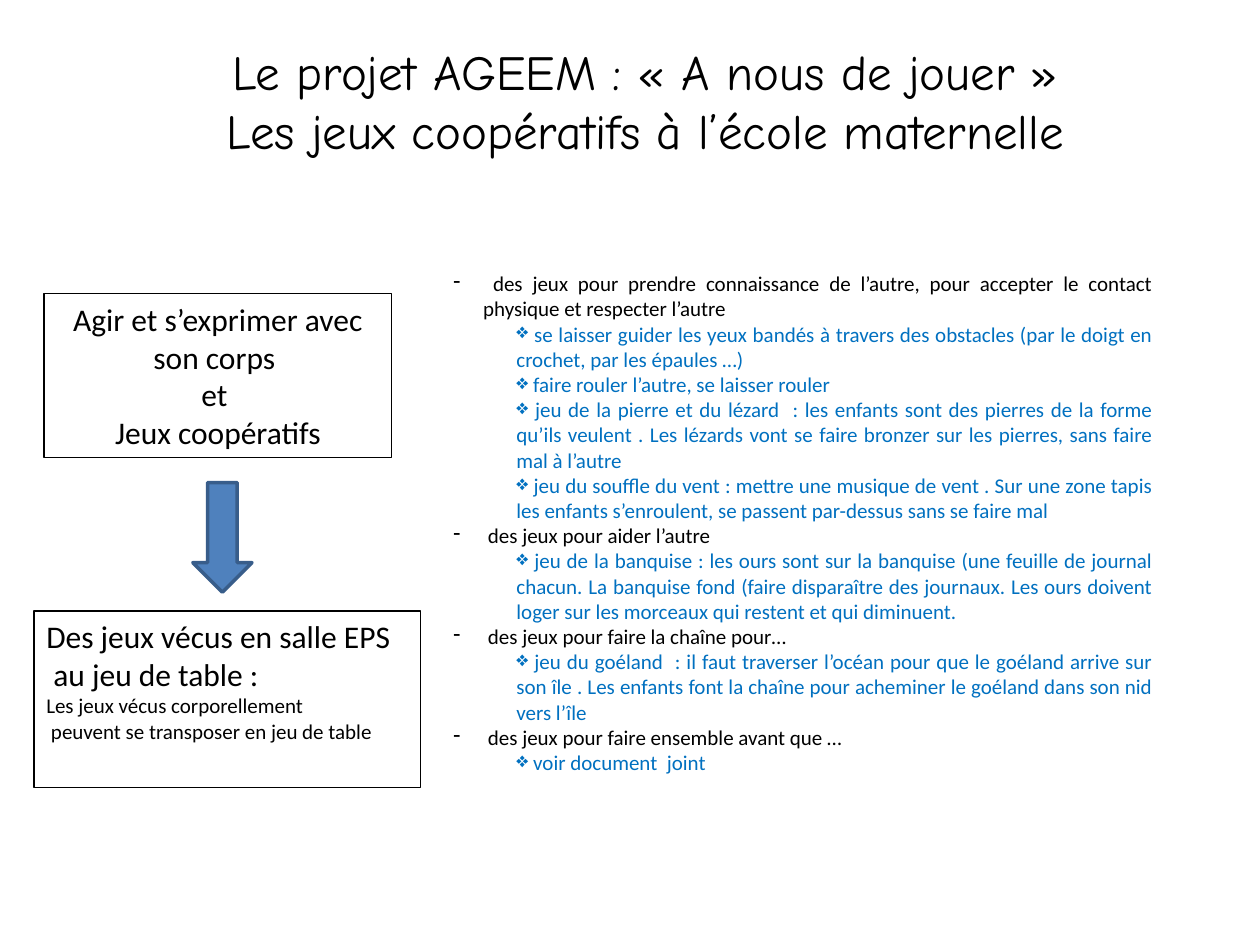
from lxml.etree import SubElement
from pptx import Presentation
from pptx.dml.color import RGBColor
from pptx.enum.shapes import MSO_SHAPE as Shape
from pptx.enum.text import MSO_ANCHOR as Anchor, PP_ALIGN as Align
from pptx.oxml.ns import qn
from pptx.util import Pt

COLORS = {"text": "000000", "activity": "0070C0", "arrow": "4F81BD", "arrow_line": "385D8A"}
TITLE_FONT, BODY_FONT = "Comic Neue", "Calibri"

TITLE = ["Le projet AGEEM : «\u00a0A nous de jouer\u00a0»", "Les jeux coopératifs à l’école maternelle"]
DOMAIN = ["Agir et s’exprimer avec son corps ", "et ", "Jeux coopératifs"]
TRANSFER = [
    ("Des jeux vécus en salle EPS", 18),
    (" au jeu de table :", 18),
    ("Les jeux vécus corporellement", 12),
    (" peuvent se transposer en jeu de table", 12),
]
GAMES = [
    (" des jeux pour prendre connaissance de l’autre, pour accepter le contact physique et respecter l’autre ", [
        " se laisser guider les yeux bandés à travers des obstacles (par le doigt en crochet, par les épaules …)",
        " faire rouler l’autre, se laisser rouler",
        " jeu de la pierre et du lézard  : les enfants sont des pierres de la forme qu’ils veulent . "
        "Les lézards vont se faire bronzer sur les pierres, sans faire mal à l’autre",
        " jeu du souffle du vent : mettre une musique de vent . Sur une zone tapis les enfants "
        "s’enroulent, se passent par-dessus sans se faire mal",
    ]),
    (" des jeux pour aider l’autre", [
        " jeu de la banquise : les ours sont sur la banquise (une feuille de journal chacun. "
        "La banquise fond (faire disparaître des journaux. Les ours doivent loger sur les morceaux "
        "qui restent et qui diminuent.",
    ]),
    (" des jeux pour faire la chaîne pour…", [
        " jeu du goéland  : il faut traverser l’océan pour que le goéland arrive sur son île . "
        "Les enfants font la chaîne pour acheminer le goéland dans son nid vers l’île",
    ]),
    (" des jeux pour faire ensemble avant que …", [" voir document  joint"]),
]
BULLETS = [("-", 17, -17, "text"), ("❖", 36, 0, "activity")]


def rgb(name):
    return RGBColor.from_string(COLORS[name])


def add_box(slide, area, kind=None):
    lengths = [Pt(value) for value in area]
    if kind is None:
        shape = slide.shapes.add_textbox(*lengths)
    else:
        shape = slide.shapes.add_shape(kind, *lengths)
        shape.shadow.inherit = False
    shape.text_frame.word_wrap = True
    shape.text_frame.vertical_anchor = Anchor.TOP
    return shape


def add_frame(slide, area):
    shape = add_box(slide, area, Shape.RECTANGLE)
    shape.fill.background()
    shape.line.color.rgb = rgb("text")
    shape.line.width = Pt(0.75)
    return shape


def write(shape, lines, font, align, color="text"):
    frame = shape.text_frame
    paragraphs = []
    for index, (text, size) in enumerate(lines):
        paragraph = frame.add_paragraph() if index else frame.paragraphs[0]
        paragraph.text = text
        paragraph.alignment = align
        paragraph.font.name = font
        paragraph.font.size = Pt(size)
        paragraph.font.color.rgb = rgb(color)
        paragraphs.append(paragraph)
    return paragraphs


def add_bullet(paragraph, level):
    character, margin, indent, color = BULLETS[level]
    paragraph.level = level
    paragraph.font.color.rgb = rgb(color)
    properties = paragraph._p.get_or_add_pPr()
    properties.set("marL", str(Pt(margin)))
    properties.set("indent", str(Pt(indent)))
    bullet = SubElement(properties, qn("a:buChar"), char=character)
    properties.find(qn("a:defRPr")).addprevious(bullet)
    bullet_color = SubElement(properties, qn("a:buClr"))
    SubElement(bullet_color, qn("a:srgbClr"), val=COLORS[color])
    bullet.addprevious(bullet_color)


def main():
    presentation = Presentation()
    presentation.slide_width, presentation.slide_height = Pt(720), Pt(540)
    slide = presentation.slides.add_slide(presentation.slide_layouts[6])

    title = add_box(slide, (54, 20.2, 629.3, 75))
    write(title, [(text, 28) for text in TITLE], TITLE_FONT, Align.CENTER)

    domain = add_frame(slide, (25.2, 167.8, 198.7, 93.6))
    write(domain, [(text, 18) for text in DOMAIN], BODY_FONT, Align.CENTER)

    transfer = add_frame(slide, (19.4, 349.2, 221, 100.8))
    write(transfer, TRANSFER, BODY_FONT, Align.LEFT)

    items = [item for aim, activities in GAMES
             for item in [(aim, 0)] + [(activity, 1) for activity in activities]]
    games = add_box(slide, (252, 151.2, 414, 337.7))
    paragraphs = write(games, [(text, 12) for text, _ in items], BODY_FONT, Align.JUSTIFY)
    for paragraph, (_, level) in zip(paragraphs, items):
        add_bullet(paragraph, level)

    arrow = add_box(slide, (110.2, 275.8, 33.8, 62.6), Shape.DOWN_ARROW)
    arrow.fill.solid()
    arrow.fill.fore_color.rgb = rgb("arrow")
    arrow.line.color.rgb = rgb("arrow_line")
    arrow.line.width = Pt(2)

    presentation.save("out.pptx")


if __name__ == "__main__":
    main()
